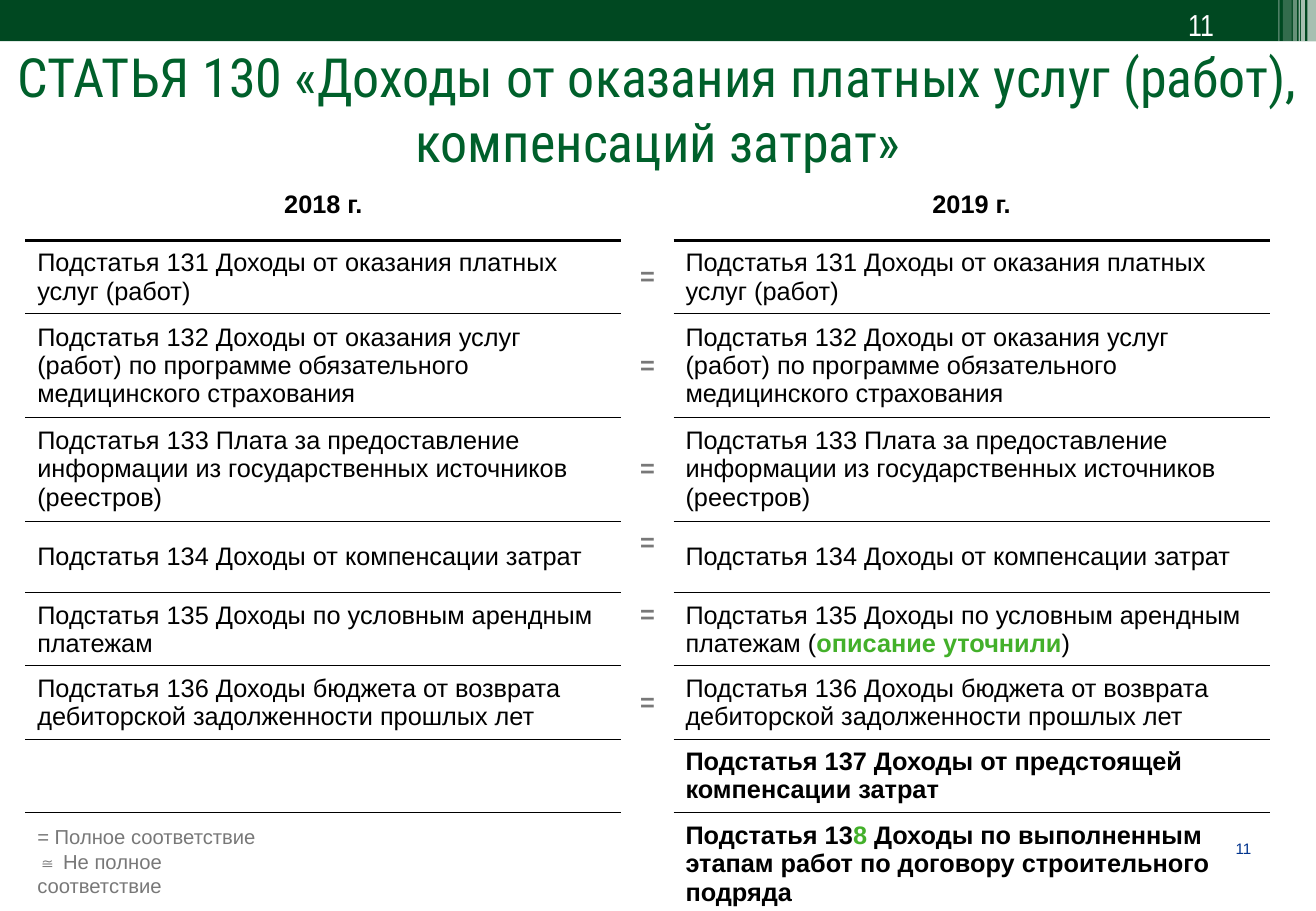
from lxml.etree import SubElement
from pptx import Presentation
from pptx.dml.color import RGBColor
from pptx.enum.shapes import MSO_SHAPE
from pptx.enum.text import MSO_ANCHOR, MSO_AUTO_SIZE, PP_ALIGN
from pptx.oxml import parse_xml
from pptx.oxml.ns import nsdecls, qn
from pptx.util import Cm, Pt

WIDTH, HEIGHT = 27.51, 19.05
BLACK, WHITE, GRAY, LIME = "000000", "FFFFFF", "787878", "43B02A"
PLAIN = "{2D5ABB26-0587-4C30-8999-92F81FD0307C}"
STRIPES = [(27.33, 0.18, 65), (27.2, 0.08, 65), (27.15, 0.03, 60),
           (27.03, 0.08, 40), (26.82, 0.18, 20), (26.72, 0.03, 30)]
TITLE = "СТАТЬЯ 130 «Доходы от оказания платных услуг (работ), компенсаций затрат»"
SAME = [
    "Подстатья 131 Доходы от оказания платных услуг (работ)",
    "Подстатья 132 Доходы от оказания услуг (работ) по программе "
    "обязательного медицинского страхования",
    "Подстатья 133 Плата за предоставление информации из "
    "государственных источников (реестров)",
    "Подстатья 134 Доходы от компенсации затрат",
    "Подстатья 135 Доходы по условным арендным платежам",
    "Подстатья 136 Доходы бюджета от возврата дебиторской задолженности прошлых лет",
]
NOTE = [(" (", {}), ("описание уточнили", {"color": LIME, "bold": True}), (")", {})]
ADDED = [
    [("Подстатья 137 Доходы от предстоящей компенсации затрат", {})],
    [("Подстатья 13", {}), ("8", {"color": LIME}),
     (" Доходы по выполненным этапам работ по договору строительного подряда", {})],
]
TALL_ROWS = (2, 3, 8)
RAISED_ROWS = (4, 5)


def tint(code):
    """Turn a hex string into a colour."""
    return RGBColor.from_string(code)


def write(frame, text, align=PP_ALIGN.LEFT, **look):
    """Fill a frame with text, or with a list of runs and their overrides."""
    runs = [(text, {})] if isinstance(text, str) else text
    base = {"size": 15, "name": "Arial", "color": BLACK, "bold": False, **look}
    frame.clear()
    line = frame.paragraphs[0]
    line.alignment = align
    for words, change in runs:
        style = {**base, **change}
        for count, part in enumerate(words.split("\n")):
            if count:
                line = frame.add_paragraph()
                line.alignment = align
            run = line.add_run()
            run.text = part
            run.font.size = Pt(style["size"])
            run.font.name = style["name"]
            run.font.bold = style["bold"]
            run.font.color.rgb = tint(style["color"])


def label(slide, box, text, pad=None, **look):
    """Place a wrapped text box."""
    frame = slide.shapes.add_textbox(*map(Cm, box)).text_frame
    frame.word_wrap = True
    if pad is not None:
        frame.margin_left = frame.margin_right = Cm(pad)
        frame.margin_top = frame.margin_bottom = Cm(pad)
    write(frame, text, **look)


def block(slide, box, color, alpha=100):
    """Draw a borderless rectangle with a given opacity."""
    shape = slide.shapes.add_shape(MSO_SHAPE.RECTANGLE, *map(Cm, box))
    shape.shadow.inherit = False
    shape.line.fill.background()
    shape.fill.solid()
    shape.fill.fore_color.rgb = tint(color)
    if alpha < 100:
        hue = shape.fill._xPr.find(".//" + qn("a:srgbClr"))
        SubElement(hue, qn("a:alpha"), val=str(alpha * 1000))


def header(slide, box):
    """Draw the top band, its stripes and the page number."""
    left, top, wide, high = box
    block(slide, box, "004821")
    for shift, size, alpha in STRIPES:
        block(slide, (left + shift, top, size, high), WHITE, alpha)
    label(slide, (left + 24.59, top, 2.29, 1.02), "11",
          size=18, name="Arial Narrow", color=WHITE)


def heading(slide, box):
    """Move and format the title."""
    title = slide.shapes.title
    title.left, title.top, title.width, title.height = map(Cm, box)
    frame = title.text_frame
    frame.word_wrap = True
    frame.auto_size = MSO_AUTO_SIZE.NONE
    frame.vertical_anchor = MSO_ANCHOR.MIDDLE
    write(frame, TITLE, PP_ALIGN.CENTER, size=32, name="Roboto Condensed", color="00602B")


def rule(cell, side, points):
    """Add a black border on the top or bottom of a cell."""
    line = parse_xml(
        f'<a:ln{side} {nsdecls("a")} w="{Pt(points)}"><a:solidFill>'
        f'<a:srgbClr val="{BLACK}"/></a:solidFill></a:ln{side}>')
    cell._tc.get_or_add_tcPr().append(line)


def matrix(slide, box):
    """Build the table that compares the two years."""
    left, top, wide, high = box
    rows = [("2018 г.", "", "2019 г.")]
    rows += [(text, "=", [(text, {})] + (NOTE if "135" in text else [])) for text in SAME]
    rows += [("", "", runs) for runs in ADDED]
    frame = slide.shapes.add_table(len(rows), 3, *map(Cm, box))
    table = frame.table
    table.first_row = table.horz_banding = False
    table._tbl.tblPr.find(qn("a:tableStyleId")).text = PLAIN
    middle = 1.09
    side = (wide - middle) / 2
    for column, size in zip(table.columns, (side, middle, side)):
        column.width = Cm(size)
    for r, row in enumerate(rows):
        table.rows[r].height = Cm(2.14 if r in TALL_ROWS else 1.5)
        for c, text in enumerate(row):
            cell = table.cell(r, c)
            cell.vertical_anchor = MSO_ANCHOR.MIDDLE
            cell.margin_left = cell.margin_right = Cm(0.25)
            raised = c == 1 and r in RAISED_ROWS
            cell.margin_top, cell.margin_bottom = Cm(0.13), Cm(0.72 if raised else 0.13)
            if c != 1:
                if r:
                    rule(cell, "T", 1.5 if r == 1 else 0.5)
                rule(cell, "B", 0.5 if r else 1.5)
            cell.fill.background()
            if text:
                center = c == 1 or r == 0
                write(cell.text_frame, text,
                      PP_ALIGN.CENTER if center else PP_ALIGN.LEFT,
                      bold=center or r > len(SAME), color=GRAY if c == 1 else BLACK)


def main():
    """Build and save the slide."""
    deck = Presentation()
    deck.slide_width, deck.slide_height = Cm(WIDTH), Cm(HEIGHT)
    slide = deck.slides.add_slide(deck.slide_layouts[5])
    label(slide, (25.07, 17.55, 1.09, 0.41), "11", pad=0,
          align=PP_ALIGN.RIGHT, size=9, color="00338D")
    header(slide, (0, 0, WIDTH, 0.86))
    heading(slide, (0, 0.76, WIDTH, 3))
    matrix(slide, (0.53, 3.53, 26.01, 15.42))
    label(slide, (0.53, 17.12, 5.4, 1.27), "= Полное соответствие\n≅ Не полное соответствие",
          size=12, color=GRAY)
    deck.save("out.pptx")


if __name__ == "__main__":
    main()
